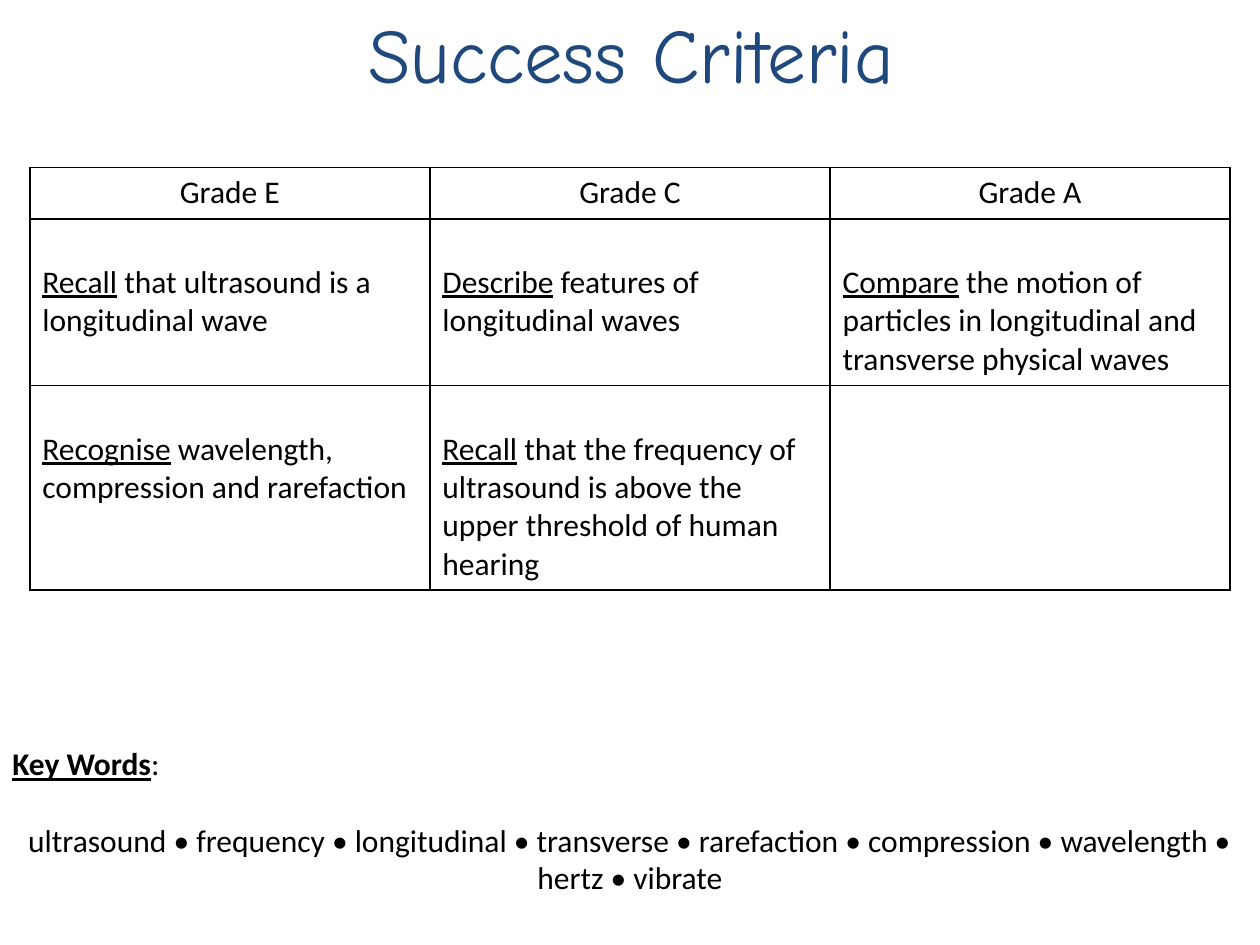
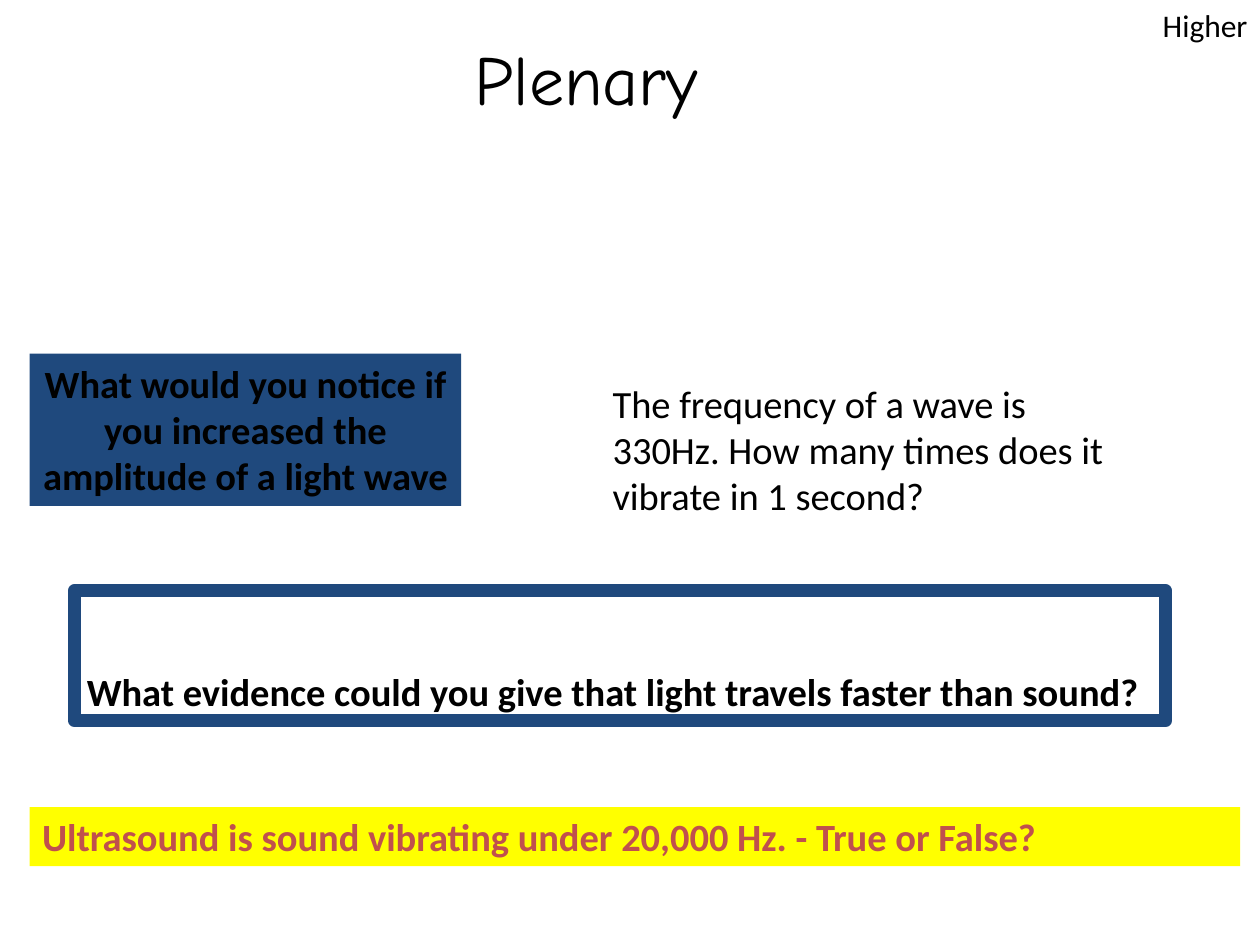
"""Builds two lesson slides on ultrasound: success criteria and plenary."""
from dataclasses import dataclass, field
from typing import Any

import pptx
import pptx.dml.color
import pptx.enum.shapes
import pptx.enum.text
import pptx.oxml
import pptx.oxml.ns
import pptx.util

Cm = pptx.util.Cm
Pt = pptx.util.Pt
Align = pptx.enum.text.PP_ALIGN
Anchor = pptx.enum.text.MSO_ANCHOR


@dataclass(frozen=True)
class Theme:
    navy: str = "1F497D"
    black: str = "000000"
    yellow: str = "FFFF00"
    red: str = "C0504D"
    title: str = "Comic Neue"
    body: str = "Calibri"
    small: int = 18
    large: int = 22
    frame: float = 7.25
    rule: float = 1


THEME = Theme()


@dataclass(frozen=True)
class Run:
    text: str
    style: dict[str, Any] = field(default_factory=dict)


@dataclass(frozen=True)
class Para:
    runs: list[Run]
    align: Align = Align.LEFT
    before: float = 0


@dataclass(frozen=True)
class Box:
    place: tuple[float, float, float, float]
    paras: list[Para]
    size: int = THEME.small
    color: str = THEME.black
    face: str = THEME.body
    bold: bool = False
    fill: str | None = None
    line: str | None = None
    anchor: Anchor = Anchor.TOP


def tint(code: str) -> pptx.dml.color.RGBColor:
    return pptx.dml.color.RGBColor.from_string(code)


def apply(target: Any, values: dict[str, Any]) -> None:
    for name, value in values.items():
        setattr(target, name, value)


def write(frame: Any, paras: list[Para], color: str, base: dict[str, Any]) -> None:
    for index, item in enumerate(paras):
        para = frame.add_paragraph() if index else frame.paragraphs[0]
        apply(para, {"alignment": item.align, "space_before": Pt(item.before)})
        for part in item.runs:
            run = para.add_run()
            run.text = part.text
            apply(run.font, base | part.style)
            run.font.color.rgb = tint(color)


def draw_box(slide: Any, box: Box) -> None:
    place = [Cm(value) for value in box.place]
    if box.fill or box.line:
        shape = slide.shapes.add_shape(pptx.enum.shapes.MSO_SHAPE.RECTANGLE, *place)
        shape.shadow.inherit = False
    else:
        shape = slide.shapes.add_textbox(*place)
    if box.fill:
        shape.fill.solid()
        shape.fill.fore_color.rgb = tint(box.fill)
    else:
        shape.fill.background()
    if box.line:
        shape.line.color.rgb = tint(box.line)
        shape.line.width = Pt(THEME.frame)
    else:
        shape.line.fill.background()
    apply(shape.text_frame, {"word_wrap": True, "vertical_anchor": box.anchor})
    base = {"name": box.face, "size": Pt(box.size), "bold": box.bold}
    write(shape.text_frame, box.paras, box.color, base)


def rule_cell(cell: Any) -> None:
    props = cell._tc.get_or_add_tcPr()
    space = pptx.oxml.ns.nsdecls("a")
    for index, side in enumerate(("lnL", "lnR", "lnT", "lnB")):
        edge = pptx.oxml.parse_xml(
            f'<a:{side} {space} w="{Pt(THEME.rule)}"><a:solidFill>'
            f'<a:srgbClr val="{THEME.black}"/></a:solidFill></a:{side}>')
        props.insert(index, edge)


def draw_grid(slide: Any, left: float, top: float, width: float,
              heights: list[float], rows: list[list[Para | None]]) -> None:
    count = len(rows[0])
    grid = slide.shapes.add_table(len(rows), count, Cm(left), Cm(top),
                                  Cm(width), Cm(sum(heights))).table
    apply(grid, {"first_row": False, "horz_banding": False})
    for col in grid.columns:
        col.width = Cm(width / count)
    base = {"name": THEME.body, "size": Pt(THEME.small)}
    for r, (height, row) in enumerate(zip(heights, rows)):
        grid.rows[r].height = Cm(height)
        for c, para in enumerate(row):
            cell = grid.cell(r, c)
            cell.fill.background()
            rule_cell(cell)
            if r:
                cell.margin_top = Cm(0.9)
            if para:
                write(cell.text_frame, [para], THEME.black, base)


def goal(verb: str, rest: str) -> Para:
    return Para([Run(verb, {"underline": True}), Run(rest)])


def plain(text: str, align: Align = Align.LEFT, before: float = 0) -> Para:
    return Para([Run(text)], align, before)


def title(text: str, place: tuple[float, float, float, float],
          size: int, color: str) -> Box:
    return Box(place, [plain(text, Align.CENTER)], size, color, THEME.title)


WORDS = ["ultrasound", "frequency", "longitudinal", "transverse", "rarefaction",
         "compression", "wavelength", "hertz", "vibrate"]

GOALS = [
    [plain(f"Grade {mark}", Align.CENTER) for mark in "ECA"],
    [goal("Recall", " that ultrasound is a longitudinal wave"),
     goal("Describe", " features of longitudinal waves"),
     goal("Compare", " the motion of particles in longitudinal and "
                     "transverse physical waves")],
    [goal("Recognise", " wavelength, compression and rarefaction"),
     goal("Recall", " that the frequency of ultrasound is above the upper "
                    "threshold of human hearing"),
     None],
]

AIMS = [
    title("Success Criteria", (1.3, 0, 22.86, 3.18), 44, THEME.navy),
    Box((0, 14.88, 25.4, 3.33), [
        Para([Run("Key Words", {"bold": True, "underline": True}), Run(":")]),
        plain(" • ".join(WORDS), Align.CENTER, THEME.large),
    ]),
]

TASKS = [
    Box((1.5, 11.91, 22, 2.62),
        [plain("What evidence could you give that light travels faster than sound?")],
        THEME.large, bold=True, line=THEME.navy, anchor=Anchor.BOTTOM),
    Box((0.6, 7.13, 8.7, 3.07),
        [plain("What would you notice if you increased the amplitude of a light wave",
               Align.CENTER)],
        THEME.large, bold=True, fill=THEME.navy),
    Box((0.6, 16.27, 24.4, 1.19),
        [plain("Ultrasound is sound vibrating under 20,000 Hz. - True or False?")],
        THEME.large, THEME.red, bold=True, fill=THEME.yellow),
    Box((12.1, 7.53, 10.8, 3.05),
        [plain("The frequency of a wave is 330Hz. How many times does it "
               "vibrate in 1 second?")], THEME.large),
    title("Plenary", (7.35, 0.6, 8.94, 1.95), 40, THEME.black),
    Box((20.65, 0, 4.75, 1.02), [plain("Higher", Align.RIGHT)]),
]


def main() -> None:
    deck = pptx.Presentation()
    apply(deck, {"slide_width": Cm(25.4), "slide_height": Cm(19.05)})
    for boxes in (AIMS, TASKS):
        slide = deck.slides.add_slide(deck.slide_layouts[6])
        for box in boxes:
            draw_box(slide, box)
        if boxes is AIMS:
            draw_grid(slide, 0.6, 3.38, 24.2, [1.03, 3.36, 4.12], GOALS)
    deck.save("out.pptx")


if __name__ == "__main__":
    main()
